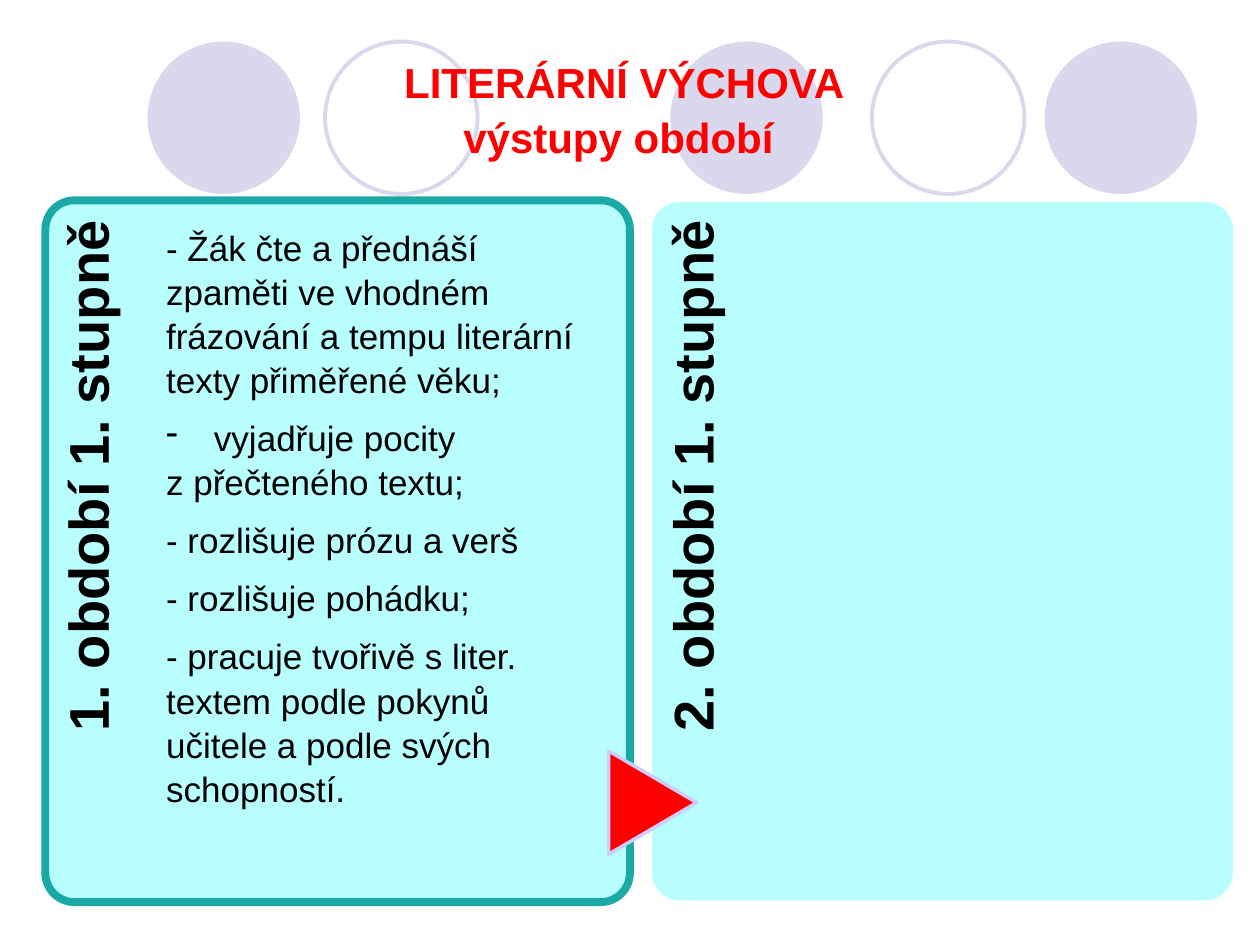
from typing import NamedTuple

from lxml.etree import SubElement
from pptx import Presentation
from pptx.dml.color import RGBColor
from pptx.enum.shapes import MSO_SHAPE as Geo
from pptx.enum.text import MSO_ANCHOR as Anchor, MSO_AUTO_SIZE as Auto, PP_ALIGN as Align
from pptx.oxml.ns import qn
from pptx.util import Inches, Pt

# Grid of 100 columns by 75 rows
WIDE, HIGH = Inches(10), Inches(7.5)
COL, ROW = WIDE / 100, HIGH / 75
LILAC, AQUA, RED, BLACK = "D9D8EC", "B8FEFE", "FF0000", "000000"


class Box(NamedTuple):
    x: float
    y: float
    w: float
    h: float

    def emu(self) -> tuple:
        return (round(self.x * COL), round(self.y * ROW),
                round(self.w * COL), round(self.h * ROW))


class Disc(NamedTuple):
    x: float
    solid: bool


class Panel(NamedTuple):
    x: float
    label: str
    line: str
    thick: float


class Item(NamedTuple):
    text: str
    after: float = 8
    dash: bool = False


DISCS = [Disc(11.7, True), Disc(25.8, False), Disc(53.2, True),
         Disc(69.2, False), Disc(82.9, True)]
PANELS = [Panel(3.6, "1. období 1. stupně", "1AA9A6", 4.5),
          Panel(51.6, "2. období 1. stupně", "FFFFFF", 2)]
TITLE = ["LITERÁRNÍ VÝCHOVA", "výstupy období "]
ITEMS = [
    Item("- Žák čte a přednáší zpaměti ve vhodném frázování a tempu "
         "literární texty přiměřené věku;"),
    Item("vyjadřuje pocity", 0, True),
    Item("z přečteného textu;"),
    Item("- rozlišuje prózu a verš"),
    Item("- rozlišuje pohádku;"),
    Item("- pracuje tvořivě s liter. textem podle pokynů učitele "
         "a podle svých schopností."),
]


def paint(code: str) -> RGBColor:
    return RGBColor.from_string(code)


def draw(slide, geo, box: Box, fill: str = "", line: str = "", thick: float = 1):
    shape = slide.shapes.add_shape(geo, *box.emu())
    shape.shadow.inherit = False
    if fill:
        shape.fill.solid()
        shape.fill.fore_color.rgb = paint(fill)
    else:
        shape.fill.background()
    if line:
        shape.line.color.rgb = paint(line)
        shape.line.width = Pt(thick)
    else:
        shape.line.fill.background()
    return shape


def frame(shape, pads=(0.1, 0.05, 0.1, 0.05)):
    """Set a wrapping, top-anchored text frame with left, top, right, bottom pads."""
    body = shape.text_frame
    body.word_wrap = True
    body.auto_size = Auto.NONE
    body.vertical_anchor = Anchor.TOP
    (body.margin_left, body.margin_top,
     body.margin_right, body.margin_bottom) = map(Inches, pads)
    return body


def write(body, n: int, text: str, size: float, color: str, bold: bool = False):
    """Fill paragraph n of the frame with one run."""
    par = body.add_paragraph() if n else body.paragraphs[0]
    run = par.add_run()
    run.text = text
    font = run.font
    font.name, font.size, font.bold = "Arial", Pt(size), bold
    font.color.rgb = paint(color)
    return par


def hang(par, mark: str, depth: float) -> None:
    """Give the paragraph a bullet with a hanging indent."""
    props = par._p.get_or_add_pPr()
    props.set("marL", str(Inches(depth)))
    props.set("indent", str(-Inches(depth)))
    SubElement(props, qn("a:buChar")).set("char", mark)


def add_disc(slide, disc: Disc) -> None:
    box = Box(disc.x, 3.3, 12.1, 12.1)
    if disc.solid:
        draw(slide, Geo.OVAL, box, fill=LILAC)
    else:
        draw(slide, Geo.OVAL, box, line=LILAC, thick=2.25)


def add_panel(slide, panel: Panel) -> None:
    top, width, height = 15.9, 46.4, 55.7
    card = draw(slide, Geo.ROUNDED_RECTANGLE, Box(panel.x, top, width, height),
                AQUA, panel.line, panel.thick)
    card.adjustments[0] = 0.05
    # The label turns about its centre, so its long side runs down the panel
    long, short = 45.7, 9.3
    box = Box(panel.x + (short - long) / 2, top + (long - short) / 2, long, short)
    label = slide.shapes.add_textbox(*box.emu())
    label.rotation = 270
    par = write(frame(label, (0, 0.12, 0.16, 0)), 0, panel.label, 32, BLACK, True)
    par.alignment = Align.RIGHT
    par.line_spacing = 0.9


def add_title(slide) -> None:
    title = slide.shapes.title
    title.left, title.top, title.width, title.height = Box(14.1, 4.4, 70.9, 9.1).emu()
    body = frame(title)
    for n, text in enumerate(TITLE):
        par = write(body, n, text, 24, RED, True)
        par.alignment = Align.CENTER
        par.line_spacing = 0.9
        par.space_before = Pt(5.5)
    # Bring the heading in front of the discs
    slide.shapes._spTree.append(title._element)


def add_list(slide) -> None:
    body = frame(slide.shapes.add_textbox(*Box(12.2, 17.3, 35.4, 47).emu()))
    for n, item in enumerate(ITEMS):
        par = write(body, n, item.text, 20, BLACK)
        par.line_spacing = 1.05
        par.space_after = Pt(item.after)
        if item.dash:
            hang(par, "-", 0.38)


def main() -> None:
    deck = Presentation()
    deck.slide_width, deck.slide_height = WIDE, HIGH
    slide = deck.slides.add_slide(deck.slide_layouts[5])
    for disc in DISCS:
        add_disc(slide, disc)
    for panel in PANELS:
        add_panel(slide, panel)
    arrow = draw(slide, Geo.FLOWCHART_EXTRACT, Box(47.7, 60.2, 8.2, 7), RED, "CCCCFF", 2)
    arrow.rotation = 90
    add_title(slide)
    add_list(slide)
    deck.save("out.pptx")


if __name__ == "__main__":
    main()
